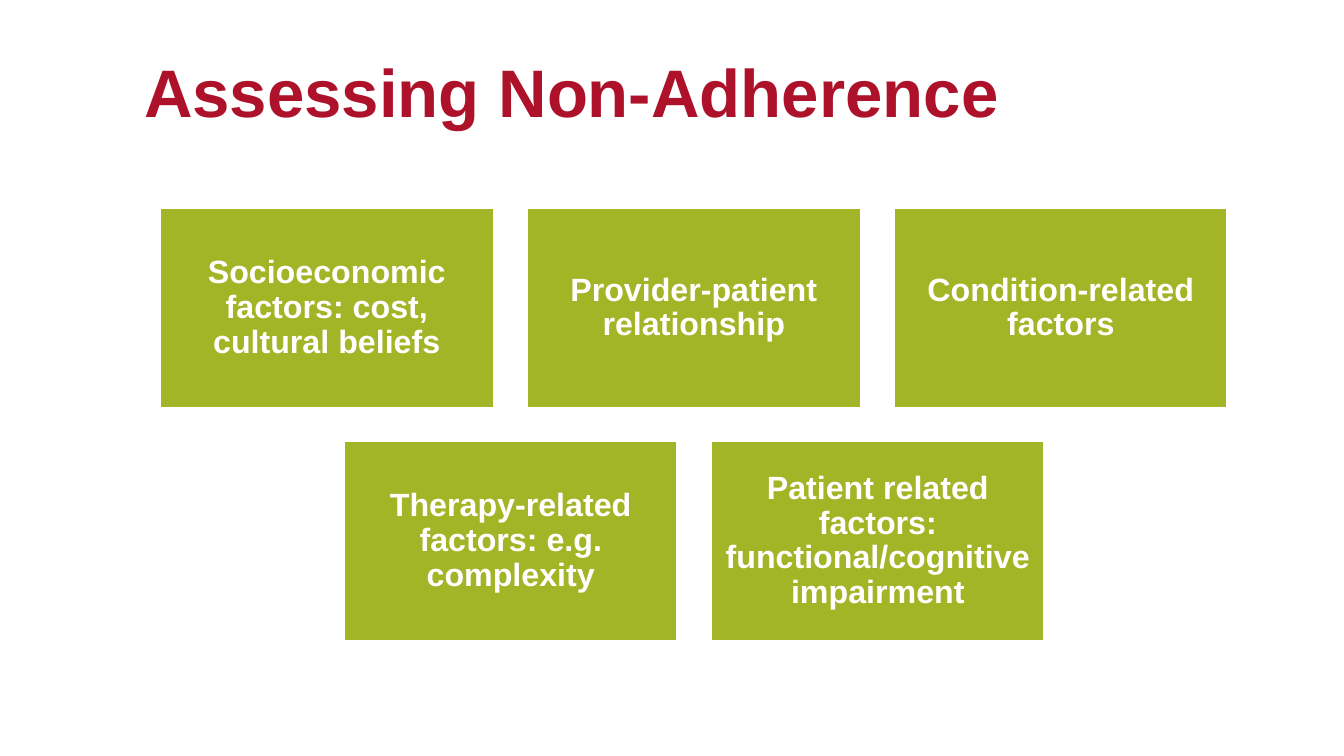
from pptx import Presentation
from pptx.dml.color import RGBColor
from pptx.enum.shapes import MSO_SHAPE
from pptx.enum.text import MSO_ANCHOR, PP_ALIGN
from pptx.util import Emu, Pt

RECTANGLE = MSO_SHAPE.RECTANGLE
MIDDLE = MSO_ANCHOR.MIDDLE
LEFT, CENTER = PP_ALIGN.LEFT, PP_ALIGN.CENTER

CRIMSON = RGBColor(0xAD, 0x12, 0x2A)
OLIVE = RGBColor(0xA2, 0xB5, 0x26)
WHITE = RGBColor(0xFF, 0xFF, 0xFF)

FONT = "Arial"
PX_PER_INCH = 100.8
SLIDE_WIDTH, SLIDE_HEIGHT = 1344, 756

BOX_WIDTH, BOX_HEIGHT, GAP = 334, 200, 33
ROWS_CENTER, ROWS_TOP = 694, 208
FACTOR_ROWS = [
    [
        "Socioeconomic factors: cost, cultural beliefs",
        "Provider-patient relationship",
        "Condition-related factors",
    ],
    [
        "Therapy-related factors: e.g. complexity",
        "Patient related factors: functional/cognitive impairment",
    ],
]


def px(length):
    return Emu(round(length * 914400 / PX_PER_INCH))


def write_text(shape, text, *, size, color, align=LEFT, inset_x=10, inset_y=0):
    frame = shape.text_frame
    frame.word_wrap = True
    frame.vertical_anchor = MIDDLE
    frame.margin_left = frame.margin_right = px(inset_x)
    frame.margin_top = frame.margin_bottom = px(inset_y)
    paragraph = frame.paragraphs[0]
    paragraph.alignment = align
    paragraph.line_spacing = 0.9
    run = paragraph.add_run()
    run.text = text
    run.font.name = FONT
    run.font.size = Pt(size)
    run.font.bold = True
    run.font.color.rgb = color


def place_title(slide, text):
    title = slide.shapes.title
    title.left, title.top = px(134), px(33)
    title.width, title.height = px(1210), px(126)
    write_text(title, text, size=48, color=CRIMSON)


def add_factor_box(slide, text, left, top):
    box = slide.shapes.add_shape(
        RECTANGLE, px(left), px(top), px(BOX_WIDTH), px(BOX_HEIGHT)
    )
    box.shadow.inherit = False
    box.fill.solid()
    box.fill.fore_color.rgb = OLIVE
    box.line.color.rgb = WHITE
    box.line.width = Pt(2)
    write_text(box, text, size=23, color=WHITE, align=CENTER, inset_y=10)


def add_factor_rows(slide):
    """Stack the rows of boxes, each row centred on the same axis."""
    for row, factors in enumerate(FACTOR_ROWS):
        row_width = len(factors) * (BOX_WIDTH + GAP) - GAP
        row_left = ROWS_CENTER - row_width // 2
        top = ROWS_TOP + row * (BOX_HEIGHT + GAP)
        for column, factor in enumerate(factors):
            left = row_left + column * (BOX_WIDTH + GAP)
            add_factor_box(slide, factor, left, top)


def main():
    presentation = Presentation()
    presentation.slide_width = px(SLIDE_WIDTH)
    presentation.slide_height = px(SLIDE_HEIGHT)
    title_only = presentation.slide_layouts.get_by_name("Title Only")
    slide = presentation.slides.add_slide(title_only)
    place_title(slide, "Assessing Non-Adherence")
    add_factor_rows(slide)
    presentation.save("out.pptx")


if __name__ == "__main__":
    main()
